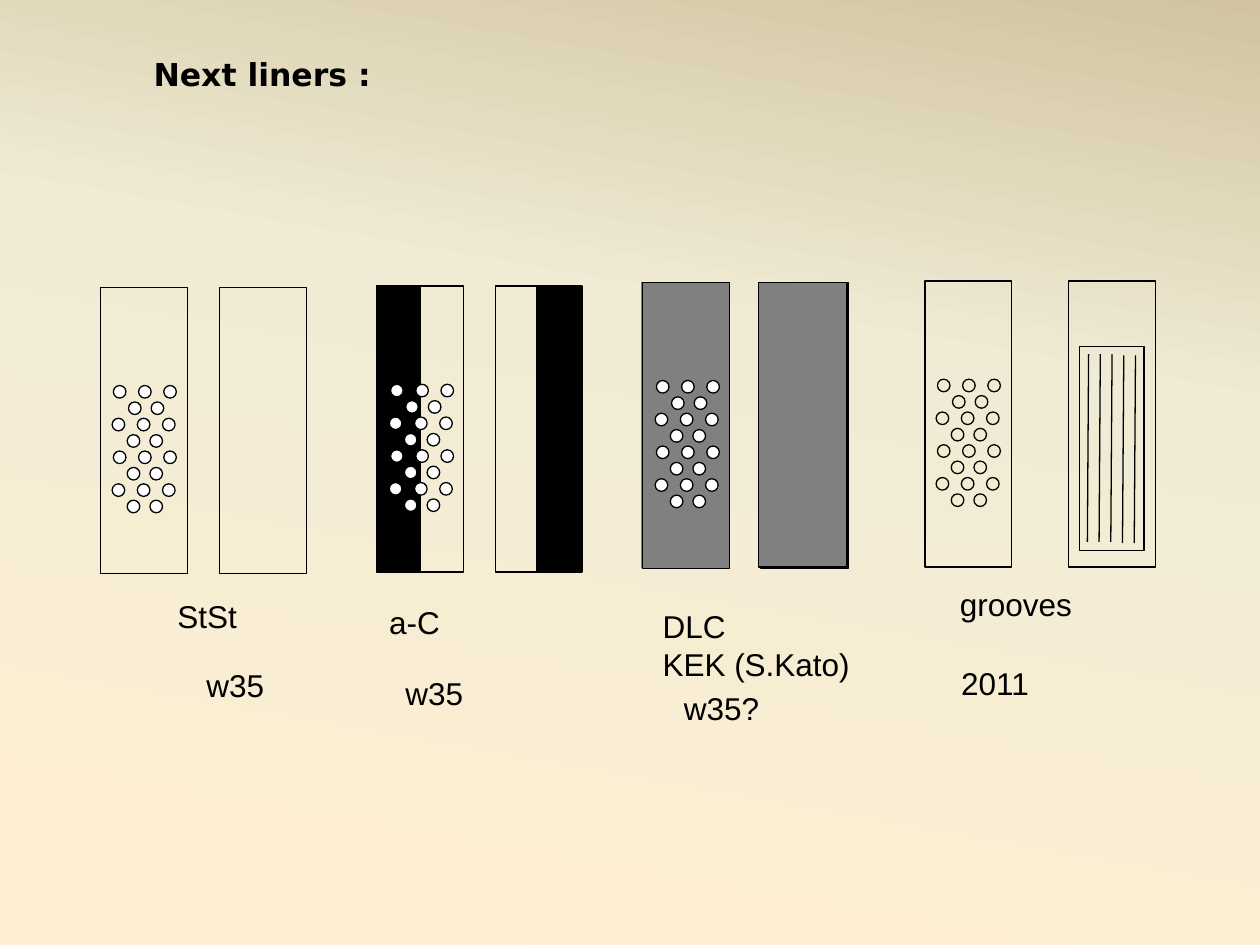
from copy import deepcopy
from dataclasses import dataclass
from typing import Optional

from lxml import etree
from pptx import Presentation
from pptx.dml.color import RGBColor
from pptx.enum.shapes import MSO_CONNECTOR, MSO_SHAPE
from pptx.enum.text import MSO_AUTO_SIZE
from pptx.oxml.ns import qn
from pptx.util import Inches, Pt

RECT = MSO_SHAPE.RECTANGLE
OVAL = MSO_SHAPE.OVAL
STRAIGHT = MSO_CONNECTOR.STRAIGHT
FIT_SHAPE = MSO_AUTO_SIZE.SHAPE_TO_FIT_TEXT

BLACK = RGBColor(0x00, 0x00, 0x00)
WHITE = RGBColor(0xFF, 0xFF, 0xFF)
GRAY = RGBColor(0x80, 0x80, 0x80)
SAND = RGBColor(0xFF, 0xEF, 0xD1)
CREAM = RGBColor(0xF0, 0xEB, 0xD5)
TAN = RGBColor(0xD1, 0xC3, 0x9F)

LINE_WIDTH = Pt(0.75)
PANEL_W, PANEL_H = 0.69, 2.27
COAT_W, COAT_H = 0.35, 2.26
HOLE = 0.1
HOLE_TOP, ROW_PITCH = 0.78, 0.13
# First hole of each row, measured from the left of the hole pattern
ROW_STARTS = (0, 0.12, -0.01, 0.11, 0, 0.11, -0.01, 0.11)


@dataclass
class Box:
    left: float
    top: float
    width: float = PANEL_W
    height: float = PANEL_H
    fill: Optional[RGBColor] = None
    line: RGBColor = BLACK


@dataclass
class Liner:
    boxes: list[Box]
    holes_left: float
    panel_top: float
    hole_fill: Optional[RGBColor] = WHITE
    back: tuple[Box, ...] = ()
    grouped: bool = False


@dataclass
class Label:
    left: float
    top: float
    width: float
    lines: tuple[str, ...]
    height: float = 0.4
    font: str = "Arial"
    bold: bool = False


LINERS = [
    # Grooves
    Liner([Box(7.34, 2.23)], 7.44, 2.23, None,
          (Box(8.48, 2.23), Box(8.57, 2.75, 0.51, 1.62)), grouped=True),
    # Stainless steel
    Liner([Box(0.8, 2.28)], 0.9, 2.28, back=(Box(1.74, 2.28),)),
    # Half-coated a-C
    Liner([Box(2.99, 2.27, COAT_W, COAT_H, BLACK), Box(2.99, 2.27)], 3.1, 2.27,
          back=(Box(3.93, 2.27), Box(4.26, 2.27, COAT_W, COAT_H, BLACK))),
    # Fully coated DLC
    Liner([Box(5.09, 2.24, PANEL_W, COAT_H, GRAY, GRAY), Box(5.1, 2.24)], 5.21, 2.24,
          back=(Box(6.04, 2.24), Box(6.02, 2.24, 0.7, COAT_H, GRAY))),
]

LABELS = [
    Label(1.12, 0.39, 2.02, ("Next liners :",), font="DejaVu Sans", bold=True),
    Label(7.52, 4.59, 1.09, ("grooves",)),
    Label(1.31, 4.69, 0.67, ("StSt",)),
    Label(5.16, 4.77, 1.69, ("DLC", "KEK (S.Kato)"), 0.7),
    Label(2.99, 4.74, 0.6, ("a-C",)),
    Label(1.54, 5.24, 0.66, ("w35",)),
    Label(7.53, 5.22, 0.74, ("2011",)),
    Label(3.12, 5.3, 0.66, ("w35",)),
    Label(5.33, 5.42, 0.81, ("w35?",)),
]


def set_background(s) -> None:
    fill = s.background.fill
    fill.gradient()
    fill.gradient_angle = 80
    stops = s._element.xpath(".//a:gsLst")[0]
    stops.insert(1, deepcopy(stops[0]))
    for stop, color, position in zip(fill.gradient_stops, (SAND, CREAM, TAN), (0, 0.65, 1)):
        stop.color.rgb = color
        stop.position = position


def add_box(shapes, box: Box, kind=RECT) -> None:
    sp = shapes.add_shape(kind, Inches(box.left), Inches(box.top),
                          Inches(box.width), Inches(box.height))
    sp.shadow.inherit = False
    if box.fill is None:
        sp.fill.background()
    else:
        sp.fill.solid()
        sp.fill.fore_color.rgb = box.fill
    sp.line.color.rgb = box.line
    sp.line.width = LINE_WIDTH


def add_holes(shapes, left: float, panel_top: float, fill: Optional[RGBColor]) -> None:
    for row, start in enumerate(ROW_STARTS):
        count, pitch = (2, 0.18) if row % 2 else (3, 0.2)
        top = panel_top + HOLE_TOP + row * ROW_PITCH
        for i in range(count):
            add_box(shapes, Box(left + start + i * pitch, top, HOLE, HOLE, fill), OVAL)


def add_liner(s, liner: Liner) -> None:
    shapes = s.shapes.add_group_shape().shapes if liner.grouped else s.shapes
    for box in liner.boxes:
        add_box(shapes, box)
    add_holes(shapes, liner.holes_left, liner.panel_top, liner.hole_fill)
    for box in liner.back:
        add_box(s.shapes, box)


def add_groove(s, x: float, top: float) -> None:
    line = s.shapes.add_connector(STRAIGHT, Inches(x), Inches(top),
                                  Inches(x - 0.01), Inches(top + 1.49))
    line.line.color.rgb = BLACK
    line.line.width = LINE_WIDTH
    etree.SubElement(line._element.spPr, qn("a:effectLst"))


def add_label(s, label: Label) -> None:
    sp = s.shapes.add_textbox(Inches(label.left), Inches(label.top),
                              Inches(label.width), Inches(label.height))
    tf = sp.text_frame
    tf.word_wrap = False
    tf.auto_size = FIT_SHAPE
    for i, text in enumerate(label.lines):
        p = tf.add_paragraph() if i else tf.paragraphs[0]
        r = p.add_run()
        r.text = text
        r.font.name = label.font
        r.font.size = Pt(18)
        r.font.bold = label.bold
        r.font.color.rgb = BLACK


def main() -> None:
    prs = Presentation()
    prs.slide_width, prs.slide_height = Inches(10), Inches(7.5)
    s = prs.slides.add_slide(prs.slide_layouts[6])
    set_background(s)

    # Liners with their hole patterns
    for liner in LINERS:
        add_liner(s, liner)

    # Grooves in the last panel
    for i in range(5):
        add_groove(s, 8.64 + i * 0.093, 2.81 if i < 3 else 2.82)

    # Title and captions
    for label in LABELS:
        add_label(s, label)

    prs.save("out.pptx")


if __name__ == "__main__":
    main()
